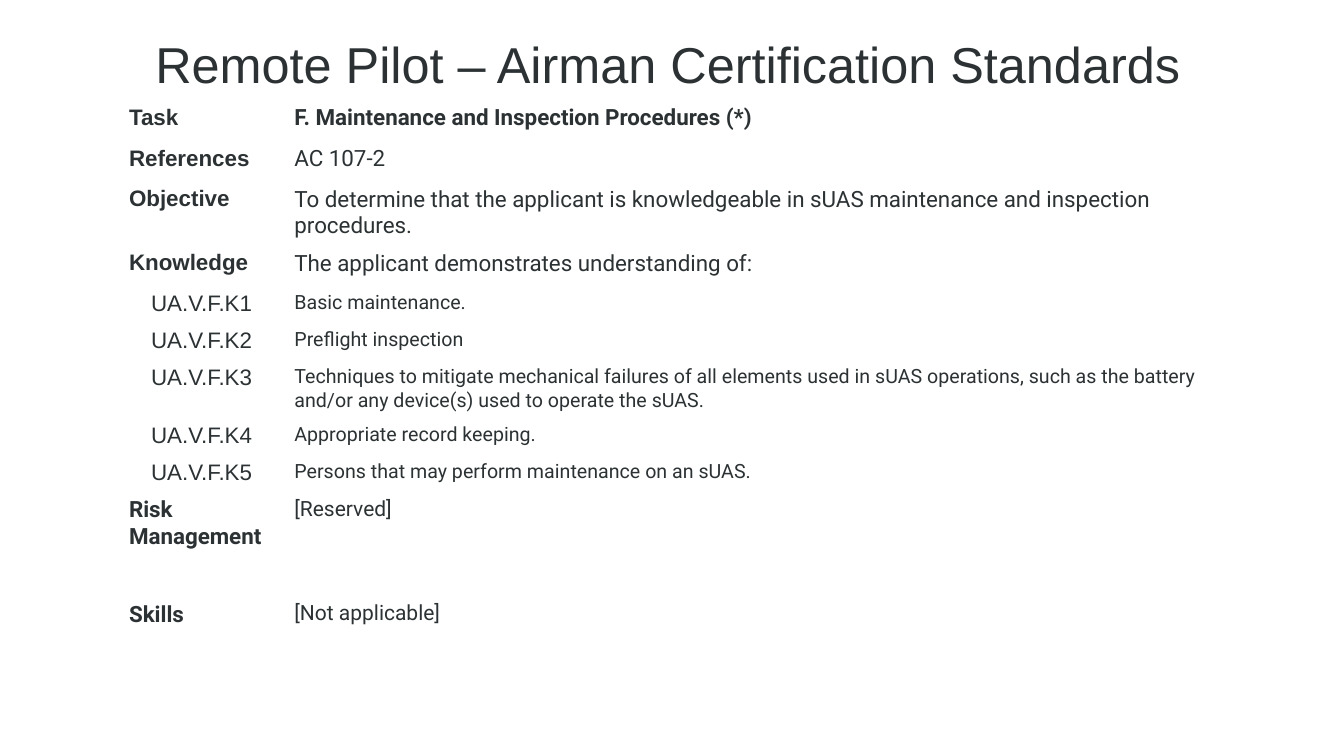
from dataclasses import dataclass

from pptx import Presentation
from pptx.dml.color import RGBColor
from pptx.enum.text import MSO_ANCHOR, MSO_AUTO_SIZE, PP_ALIGN
from pptx.slide import Slide
from pptx.table import Table, _Cell as Cell
from pptx.util import Inches, Pt


@dataclass(frozen=True)
class Theme:
    ink: RGBColor = RGBColor(0x2C, 0x32, 0x34)
    sans: str = "Arial"
    body: str = "Roboto"
    title_size: float = 36
    label_size: float = 16
    note_size: float = 15
    detail_size: float = 14


@dataclass(frozen=True)
class Standard:
    """One table row; its height is counted in grid units."""
    label: str
    content: str
    height: int
    label_font: str = "Arial"
    label_bold: bool = True
    content_size: float = 16
    content_bold: bool = False
    centered: bool = False


THEME = Theme()
UNIT = Inches(0.01)
SLIDE_COLUMNS, SLIDE_ROWS = 1333, 750
TABLE_LEFT, TABLE_TOP = 118, 99
LABEL_COLUMNS, CONTENT_COLUMNS = 164, 935

# Knowledge elements, numbered in order
KNOWLEDGE = [
    ("Basic maintenance.", 36),
    ("Preflight inspection", 36),
    ("Techniques to mitigate mechanical failures of all elements used in sUAS "
     "operations, such as the battery and/or any device(s) used to operate the sUAS.", 57),
    ("Appropriate record keeping.", 37),
    ("Persons that may perform maintenance on an sUAS.", 36),
]

STANDARDS = [
    Standard("Task", "F. Maintenance and Inspection Procedures (*)", 41, content_bold=True),
    Standard("References", "AC 107-2", 40),
    Standard("Objective", "To determine that the applicant is knowledgeable in sUAS "
             "maintenance and inspection procedures.", 63),
    Standard("Knowledge", "The applicant demonstrates understanding of:", 41),
    *(Standard(f"UA.V.F.K{number}", element, height, label_bold=False,
               content_size=THEME.detail_size, centered=True)
      for number, (element, height) in enumerate(KNOWLEDGE, 1)),
    Standard("Risk Management", "[Reserved]", 62, THEME.body, content_size=THEME.note_size),
    Standard("", "", 39),
    Standard("Skills", "[Not applicable]", 36, THEME.body, content_size=THEME.note_size),
]


def add_run(paragraph, text: str, font: str, size: float, bold: bool = False) -> None:
    run = paragraph.add_run()
    run.text = text
    run.font.name = font
    run.font.size = Pt(size)
    run.font.bold = bold
    run.font.color.rgb = THEME.ink


def add_title(slide: Slide) -> None:
    title = slide.shapes.title
    title.left, title.top, title.width, title.height = (
        units * UNIT for units in (144, 28, 1047, 71))
    frame = title.text_frame
    frame.word_wrap = False
    frame.auto_size = MSO_AUTO_SIZE.SHAPE_TO_FIT_TEXT
    frame.vertical_anchor = MSO_ANCHOR.TOP
    paragraph = frame.paragraphs[0]
    paragraph.alignment = PP_ALIGN.LEFT
    add_run(paragraph, "Remote Pilot – Airman Certification Standards",
            THEME.sans, THEME.title_size)


def fill_cell(cell: Cell, text: str, font: str, size: float, bold: bool,
              centered: bool = False) -> None:
    cell.fill.background()
    if text:
        paragraph = cell.text_frame.paragraphs[0]
        paragraph.alignment = PP_ALIGN.CENTER if centered else PP_ALIGN.LEFT
        add_run(paragraph, text, font, size, bold)


def fill_row(table: Table, index: int, standard: Standard) -> None:
    table.rows[index].height = standard.height * UNIT
    fill_cell(table.cell(index, 0), standard.label, standard.label_font,
              THEME.label_size, standard.label_bold, standard.centered)
    fill_cell(table.cell(index, 1), standard.content, THEME.body,
              standard.content_size, standard.content_bold)


def add_standards(slide: Slide) -> None:
    table = slide.shapes.add_table(
        len(STANDARDS), 2, TABLE_LEFT * UNIT, TABLE_TOP * UNIT,
        (LABEL_COLUMNS + CONTENT_COLUMNS) * UNIT,
        sum(standard.height for standard in STANDARDS) * UNIT).table
    table.horz_banding = False
    for column, units in zip(table.columns, (LABEL_COLUMNS, CONTENT_COLUMNS)):
        column.width = units * UNIT
    for index, standard in enumerate(STANDARDS):
        fill_row(table, index, standard)


def main() -> None:
    presentation = Presentation()
    presentation.slide_width = SLIDE_COLUMNS * UNIT
    presentation.slide_height = SLIDE_ROWS * UNIT
    slide = presentation.slides.add_slide(presentation.slide_layouts[5])
    add_title(slide)
    add_standards(slide)
    presentation.save("out.pptx")


if __name__ == "__main__":
    main()
